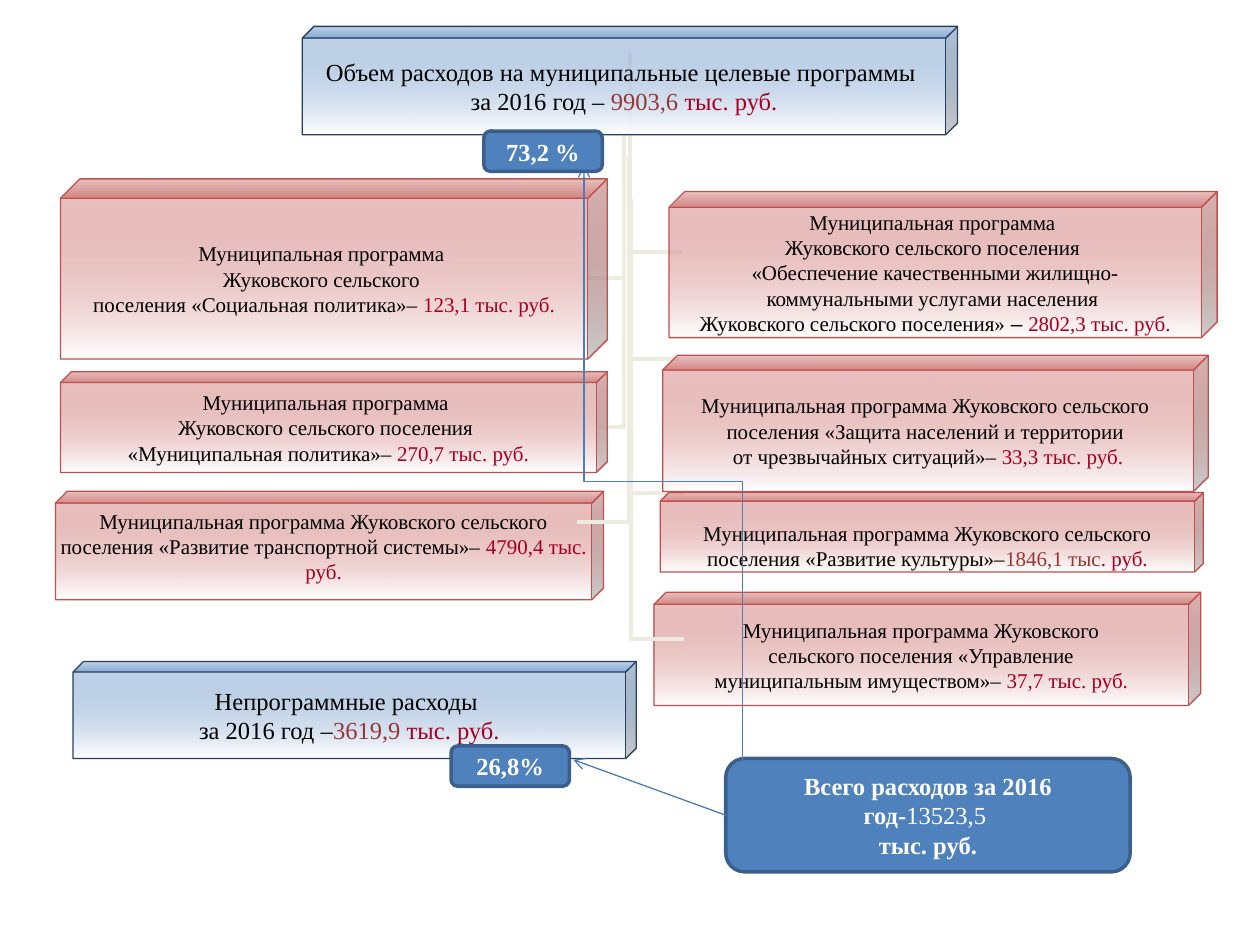
from lxml import etree
from pptx import Presentation
from pptx.dml.color import RGBColor
from pptx.enum.shapes import MSO_CONNECTOR, MSO_SHAPE
from pptx.enum.text import MSO_ANCHOR, PP_ALIGN
from pptx.oxml.ns import qn
from pptx.util import Inches, Pt

CUBE, PILL = MSO_SHAPE.CUBE, MSO_SHAPE.FLOWCHART_ALTERNATE_PROCESS
STRAIGHT, ELBOW = MSO_CONNECTOR.STRAIGHT, MSO_CONNECTOR.ELBOW
MIDDLE, CENTER = MSO_ANCHOR.MIDDLE, PP_ALIGN.CENTER
LEFT_SIDE = 1

BLUE = RGBColor(0x4F, 0x81, 0xBD)
NAVY = RGBColor(0x25, 0x40, 0x61)
EDGE = RGBColor(0x3A, 0x5F, 0x8C)
ARROW = RGBColor(0x4B, 0x7E, 0xBC)
RED = RGBColor(0xC0, 0x50, 0x4D)
BROWN = RGBColor(0x95, 0x37, 0x35)
WINE = RGBColor(0xA5, 0x00, 0x21)
SAND = RGBColor(0xEE, 0xEC, 0xE1)
BLACK = RGBColor(0, 0, 0)
WHITE = RGBColor(0xFF, 0xFF, 0xFF)

SERIF, SANS = "Times New Roman", "Arial"
COLS, ROWS = 100, 75


class Chart:
    """Draws on one slide, with places given in columns and rows."""

    def __init__(self, deck):
        self.slide = deck.slides.add_slide(deck.slide_layouts[6])
        self.col = deck.slide_width / COLS
        self.row = deck.slide_height / ROWS

    def place(self, *spots):
        """Turn column, row, column, row into slide lengths."""
        steps = (self.col, self.row) * 2
        return [round(n * step) for n, step in zip(spots, steps)]

    def box(self, kind, spot, edge, width):
        shape = self.slide.shapes.add_shape(kind, *self.place(*spot))
        shape.shadow.inherit = False
        shape.line.color.rgb = edge
        shape.line.width = Pt(width)
        return shape

    def text(self, shape, lines, size, ink, bold=False):
        """Each line is a list of runs: plain text, or (text, font changes)."""
        frame = shape.text_frame
        frame.vertical_anchor = MIDDLE
        for i, line in enumerate(lines):
            para = frame.add_paragraph() if i else frame.paragraphs[0]
            para.alignment = CENTER
            font = para.font
            font.name, font.size, font.bold = SERIF, Pt(size), bold
            font.color.rgb = ink
            for part in line:
                words, style = (part, {}) if isinstance(part, str) else part
                run = para.add_run()
                run.text = words
                for key, value in style.items():
                    if key == "ink":
                        run.font.color.rgb = value
                    else:
                        setattr(run.font, key, value)

    def cube(self, spot, lines, hue=RED, edge=RED, size=12, wrap=False,
             top=0, foot=0):
        shape = self.box(CUBE, spot, edge, 0.75)
        shape.adjustments[0] = 0.108
        shape.fill.gradient()
        shape.fill.gradient_angle = 270
        first, last = shape.fill.gradient_stops
        first.color.rgb, first.position = hue, 0
        last.color.rgb, last.position = WHITE, 1
        tint = next(shape.element.spPr.iter(qn("a:srgbClr")))
        etree.SubElement(tint, qn("a:alpha"), val="40000")
        frame = shape.text_frame
        frame.word_wrap = wrap
        frame.margin_left = frame.margin_right = 0
        frame.margin_top, frame.margin_bottom = Inches(top), Inches(foot)
        self.text(shape, lines, size, BLACK)

    def pill(self, spot, lines):
        shape = self.box(PILL, spot, EDGE, 2)
        shape.fill.solid()
        shape.fill.fore_color.rgb = BLUE
        shape.text_frame.word_wrap = True
        self.text(shape, lines, 14, WHITE, True)
        return shape

    def wire(self, kind, spots, ink, width, arrow=False):
        link = self.slide.shapes.add_connector(kind, *self.place(*spots))
        link.line.color.rgb = ink
        link.line.width = Pt(width)
        props = link.element.spPr
        etree.SubElement(props, qn("a:effectLst"))
        if arrow:
            etree.SubElement(props.find(qn("a:ln")), qn("a:tailEnd"), type="arrow")
        return link

    def branch(self, *spots):
        """A sand line that runs level first and then turns up."""
        link = self.wire(ELBOW, spots, SAND, 2.25)
        link.element.spPr.find(qn("a:prstGeom")).set("prst", "bentConnector2")


def wine(words):
    return words, {"ink": WINE}


def brown(words):
    return words, {"ink": BROWN}


def main():
    deck = Presentation()
    deck.slide_width, deck.slide_height = Inches(10), Inches(7.5)
    chart = Chart(deck)
    program = "Муниципальная программа "
    place = "Жуковского сельского "
    town = place + "поселения "

    for spots in ((53.9, 28.5, 50, 12.3), (47.4, 33.9, 49.5, 10.7),
                  (54.2, 20, 50, 7.9), (46.6, 22.1, 49.5, 10.7),
                  (54.2, 39.1, 50, 4.2)):
        chart.branch(*spots)

    chart.cube((24, 2.1, 52, 8.6), [
        ["Объем расходов на муниципальные целевые программы "],
        ["за 2016 год – ", brown("9903,6 "), wine("тыс. руб.")],
    ], BLUE, NAVY, 14, True)
    chart.cube((52.4, 39.1, 43.1, 6.3), [
        [program + town + "«Развитие культуры»–",
         brown("1846,1 тыс"), wine(". руб.")],
    ], wrap=True, top=0.14)
    chart.cube((4.8, 14.2, 43.4, 14.3), [
        [program], [place],
        ["поселения «Социальная политика»–", wine(" 123,1 тыс. руб.")],
    ])
    chart.cube((53.1, 15.2, 43.5, 11.6), [
        [program], [town],
        ["«Обеспечение качественными жилищно-"],
        ["коммунальными услугами населения "],
        [place + "поселения» ", ("– ", {"name": SANS}),
         wine("2802,3 тыс. руб.")],
    ])
    chart.cube((4.8, 29.5, 43.4, 8), [
        [program], [town],
        ["«Муниципальная политика»– ", wine("270,7 тыс. руб.")],
    ])
    chart.cube((52.6, 28.2, 43.3, 10.8), [
        [program + place],
        ["поселения «Защита населений и территории "],
        ["от чрезвычайных ситуаций»– ", wine("33,3 тыс. руб.")],
    ])
    chart.cube((51.9, 47, 43.4, 9), [
        [program + "Жуковского"],
        ["сельского поселения «Управление"],
        ["муниципальным имуществом»– ", wine("37,7 тыс. руб.")],
    ])
    chart.cube((4.4, 39, 43.5, 8.6), [
        [program + town + "«Развитие транспортной системы»– ",
         wine("4790,4 тыс. руб.")],
    ], wrap=True, foot=0.08)

    chart.branch(45.8, 41.4, 49.9, 12.3)
    chart.branch(54.3, 50.7, 50.1, 15.8)

    chart.cube((5.8, 52.5, 44.7, 7.7), [
        ["Непрограммные расходы "],
        ["за 2016 год –", brown("3619,9 "), wine("тыс. руб.")],
    ], BLUE, NAVY, 14, True)
    total = chart.pill((57.6, 60.2, 32.1, 9), [
        ["Всего расходов за 2016 год-", ("13523,5 ", {"bold": False})],
        ["тыс. руб."],
    ])
    other = chart.wire(STRAIGHT, (57.6, 64.7, 45.5, 60.3), ARROW, 0.75, True)
    other.begin_connect(total, LEFT_SIDE)

    # Laid out level, then turned so that it climbs from the total.
    climb = chart.wire(ELBOW, (27.6, 44.5, 77.7, 31.9), ARROW, 0.75, True)
    climb.element.spPr.find(qn("a:xfrm")).set("rot", str(270 * 60000))

    chart.pill((38.4, 10.4, 9.4, 3.2), [["73,2 %"]])
    chart.pill((35.8, 59.2, 9.4, 3.2), [["26,8%"]])
    deck.save("out.pptx")


if __name__ == "__main__":
    main()
